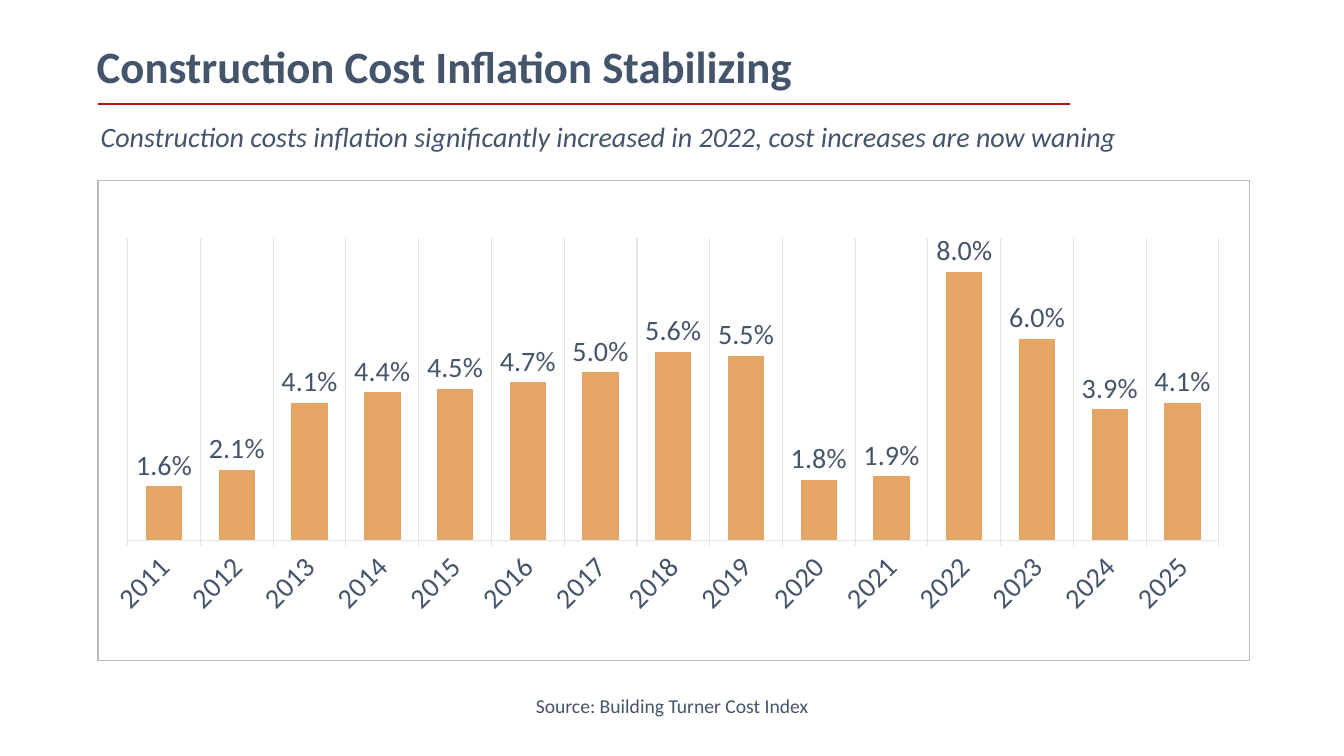
from dataclasses import dataclass

from lxml import etree
from pptx import Presentation
from pptx.chart.data import CategoryChartData
from pptx.dml.color import RGBColor
from pptx.enum.chart import (XL_CHART_TYPE, XL_LABEL_POSITION,
                             XL_TICK_LABEL_POSITION, XL_TICK_MARK)
from pptx.enum.shapes import MSO_CONNECTOR, MSO_SHAPE
from pptx.enum.text import MSO_ANCHOR, MSO_AUTO_SIZE, PP_ALIGN
from pptx.oxml.ns import qn
from pptx.util import Inches, Pt

COLUMN = XL_CHART_TYPE.COLUMN_CLUSTERED
ABOVE = XL_LABEL_POSITION.OUTSIDE_END
LOW = XL_TICK_LABEL_POSITION.LOW
OUT, NONE = XL_TICK_MARK.OUTSIDE, XL_TICK_MARK.NONE
STRAIGHT, RECT = MSO_CONNECTOR.STRAIGHT, MSO_SHAPE.RECTANGLE
MIDDLE, TOP = MSO_ANCHOR.MIDDLE, MSO_ANCHOR.TOP
LEFT, CENTER = PP_ALIGN.LEFT, PP_ALIGN.CENTER
GROW = MSO_AUTO_SIZE.SHAPE_TO_FIT_TEXT

WIDE, HIGH = Inches(13.33), Inches(7.5)
GRID = 24  # columns across and rows down the slide


@dataclass(frozen=True)
class Theme:
    font: str = "Calibri"
    ink: str = "44546A"
    rule: str = "B11C11"
    frame: str = "BABABA"
    grid: str = "E0E5EB"
    bar: str = "E5A565"
    title: int = 32
    lead: int = 20
    label: int = 20
    chart: int = 18
    note: int = 14


class Page:
    """Draws on one slide; lengths are grid columns and rows."""

    def __init__(self, slide, theme):
        self.shapes = slide.shapes
        self.theme = theme

    def place(self, col, row, cols, rows):
        return (round(col * WIDE / GRID), round(row * HIGH / GRID),
                round(cols * WIDE / GRID), round(rows * HIGH / GRID))

    def stroke(self, line, color, width):
        line.color.rgb = RGBColor.from_string(color)
        line.width = Pt(width)

    def style(self, font, size, bold=False, italic=False):
        font.name = self.theme.font
        font.size = Pt(size)
        font.bold, font.italic = bold, italic
        font.color.rgb = RGBColor.from_string(self.theme.ink)

    def text(self, words, box, size, align=LEFT, anchor=MIDDLE,
             space=0.9, grow=False, **look):
        frame = self.shapes.add_textbox(*self.place(*box)).text_frame
        frame.word_wrap = True
        frame.vertical_anchor = anchor
        if grow:
            frame.auto_size = GROW
        para = frame.paragraphs[0]
        para.text = words
        para.alignment, para.line_spacing = align, space
        self.style(para.runs[0].font, size, **look)

    def rule(self, col, row, cols):
        x, y, width, _ = self.place(col, row, cols, 0)
        line = self.shapes.add_connector(STRAIGHT, x, y, x + width, y)
        self.stroke(line.line, self.theme.rule, 1)
        etree.SubElement(line._element.spPr, qn("a:effectLst"))

    def frame(self, box):
        rect = self.shapes.add_shape(RECT, *self.place(*box))
        rect.shadow.inherit = False
        rect.fill.background()
        self.stroke(rect.line, self.theme.frame, 1)

    def columns(self, box, years, rates, plot):
        theme = self.theme
        data = CategoryChartData(number_format="0.0%")
        data.categories = years
        data.add_series("Series 1", rates)
        chart = self.shapes.add_chart(COLUMN, *self.place(*box), data).chart
        chart.has_legend = chart.has_title = False
        self.style(chart.font, theme.chart)

        # Bars and their labels
        bars = chart.plots[0]
        bars.gap_width, bars.overlap = 100, -27
        bars.vary_by_categories = False
        series = bars.series[0]
        series.invert_if_negative = False
        series.format.fill.solid()
        series.format.fill.fore_color.rgb = RGBColor.from_string(theme.bar)
        labels = series.data_labels
        labels.show_value = True
        labels.position = ABOVE
        labels.number_format = "0.0%"
        labels.number_format_is_linked = False
        self.style(labels.font, theme.label)

        # Axes
        axis = chart.category_axis
        axis.tick_label_position = LOW
        axis.major_tick_mark, axis.minor_tick_mark = OUT, NONE
        axis.has_major_gridlines = True
        for line in (axis.format.line, axis.major_gridlines.format.line):
            self.stroke(line, theme.grid, 0.75)
        self.style(axis.tick_labels.font, theme.label)
        slant = axis._element.find(qn("c:txPr")).find(qn("a:bodyPr"))
        slant.set("rot", str(-45 * 60000))
        scale = chart.value_axis
        scale.minimum_scale, scale.maximum_scale = 0, 0.09
        scale.has_major_gridlines = False
        scale.visible = False

        # Plot area, as shares of the chart
        area = chart._chartSpace.chart.plotArea
        for old in area.findall(qn("c:layout")):
            area.remove(old)
        layout = etree.Element(qn("c:layout"))
        area.insert(0, layout)
        manual = etree.SubElement(layout, qn("c:manualLayout"))
        parts = [("layoutTarget", "inner"), ("xMode", "edge"),
                 ("yMode", "edge"), *zip("xywh", plot)]
        for name, value in parts:
            etree.SubElement(manual, qn(f"c:{name}")).set("val", str(value))


def main():
    deck = Presentation()
    deck.slide_width, deck.slide_height = WIDE, HIGH
    theme = Theme()
    page = Page(deck.slides.add_slide(deck.slide_layouts[6]), theme)

    # Heading
    page.rule(1.75, 3.3, 17.35)
    page.text("Construction Cost Inflation Stabilizing",
              (1.55, 1.18, 19.42, 2.02), theme.title, bold=True)
    page.text("Construction costs inflation significantly increased in 2022, "
              "cost increases are now waning",
              (1.62, 3.39, 19.6, 2.02), theme.lead, italic=True)

    # Framed chart
    top, rows = 5.73, 15.23
    page.frame((1.75, top, 20.56, rows))
    years = [str(year) for year in range(2011, 2026)]
    rates = [0.016, 0.021, 0.041, 0.044, 0.045, 0.047, 0.05, 0.056,
             0.055, 0.018, 0.019, 0.08, 0.06, 0.039, 0.041]
    page.columns((1.98, top, 20.09, rows), years, rates,
                 plot=(0.015, 0.12, 0.97, 0.63))

    # Source
    page.text("Source: Building Turner Cost Index",
              (6.82, 21.86, 10.37, 1.09), theme.note, align=CENTER,
              anchor=TOP, space=1.0, grow=True)

    deck.save("out.pptx")


if __name__ == "__main__":
    main()
